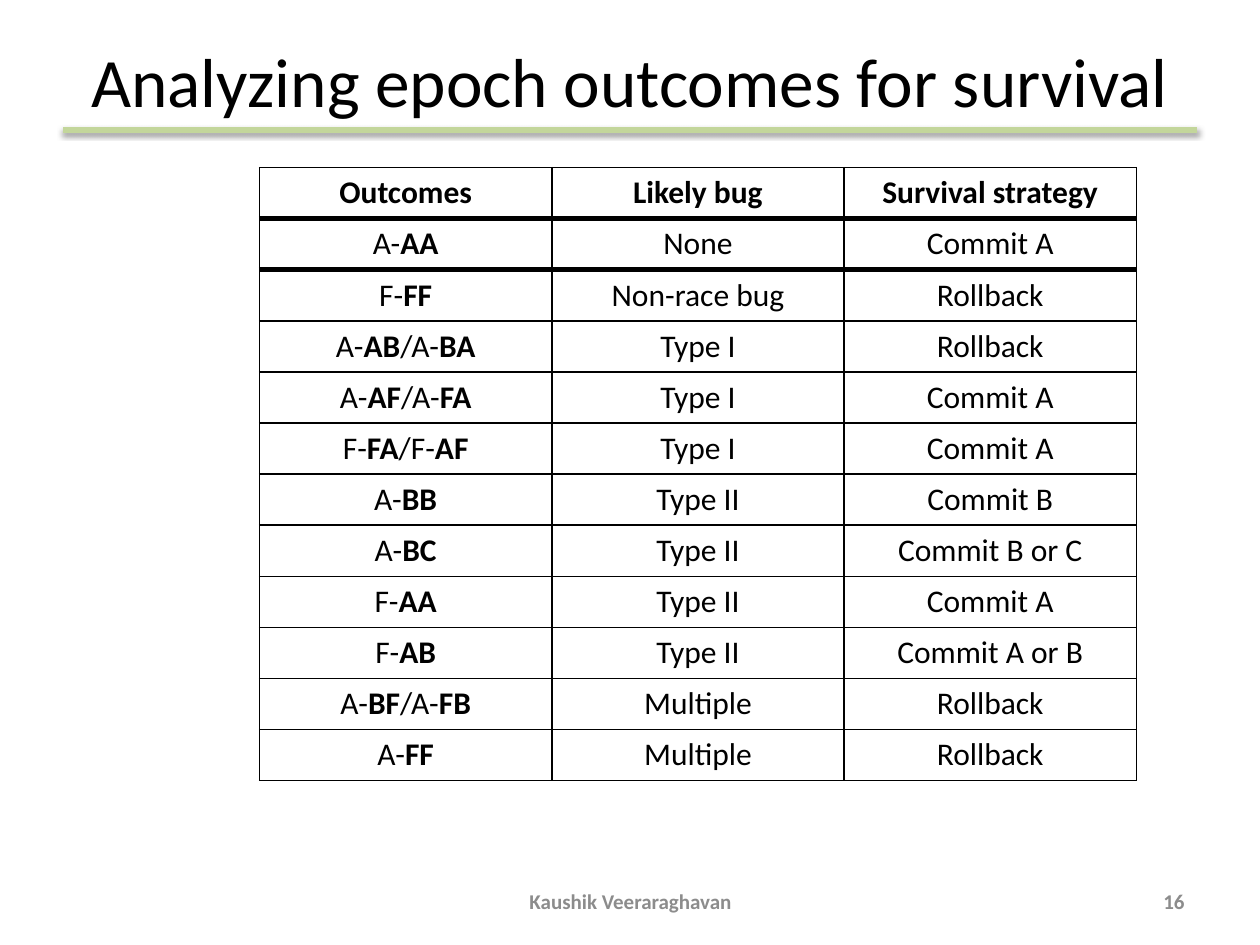
import dataclasses

import pptx
import pptx.dml.color
import pptx.enum.shapes
import pptx.enum.text
import pptx.oxml
import pptx.oxml.ns
import pptx.util
from pptx.util import Inches

ALIGN = pptx.enum.text.PP_ALIGN
NS = pptx.oxml.ns.nsdecls("a")


@dataclasses.dataclass(frozen=True)
class Theme:
    font: str = "Calibri"
    ink: str = "000000"
    muted: str = "8C8C8C"
    rule: str = "C3D69B"
    title: float = 39.6
    body: float = 18
    foot: float = 12
    thin: float = 1
    thick: float = 3


THEME = Theme()

HEAD = ("Outcomes", "Likely bug", "Survival strategy")
# Asterisks enclose bold parts.
ROWS = (
    ("A-*AA*", "None", "Commit A"),
    ("F-*FF*", "Non-race bug", "Rollback"),
    ("A-*AB*/A-*BA*", "Type I", "Rollback"),
    ("A-*AF*/A-*FA*", "Type I", "Commit A"),
    ("F-*FA*/F-*AF*", "Type I", "Commit A"),
    ("A-*BB*", "Type II", "Commit B"),
    ("A-*BC*", "Type II", "Commit B or C"),
    ("F-*AA*", "Type II", "Commit A"),
    ("F-*AB*", "Type II", "Commit A or B"),
    ("A-*BF*/A-*FB*", "Multiple", "Rollback"),
    ("A-*FF*", "Multiple", "Rollback"),
)


def write(frame, text, size, color=THEME.ink, bold=False, align=ALIGN.CENTER):
    """Fill a text frame; parts between asterisks are bold."""
    para = frame.paragraphs[0]
    para.alignment = align
    for i, part in enumerate(text.split("*")):
        if part:
            run = para.add_run()
            run.text = part
            run.font.name = THEME.font
            run.font.size = pptx.util.Pt(size)
            run.font.bold = bold or i % 2 == 1
            run.font.color.rgb = pptx.dml.color.RGBColor.from_string(color)


def label(slide, box, text, **form):
    frame = slide.shapes.add_textbox(*box).text_frame
    frame.word_wrap = True
    frame.vertical_anchor = pptx.enum.text.MSO_ANCHOR.MIDDLE
    write(frame, text, **form)


def border(cell, top, bottom):
    """Draw all four cell edges, with the given top and bottom widths."""
    props = cell._tc.get_or_add_tcPr()
    widths = {"L": THEME.thin, "R": THEME.thin, "T": top, "B": bottom}
    for i, (side, width) in enumerate(widths.items()):
        props.insert(i, pptx.oxml.parse_xml(
            f'<a:ln{side} {NS} w="{pptx.util.Pt(width)}"><a:solidFill>'
            f'<a:srgbClr val="{THEME.ink}"/></a:solidFill></a:ln{side}>'))


def header(slide, box):
    left, top, width, height = box
    line = slide.shapes.add_connector(
        pptx.enum.shapes.MSO_CONNECTOR.STRAIGHT,
        left, top + height, left + width, top + height)
    line.line.width = pptx.util.Pt(3.5)
    line.line.color.rgb = pptx.dml.color.RGBColor.from_string(THEME.rule)
    line._element.spPr.append(pptx.oxml.parse_xml(
        f'<a:effectLst {NS}><a:outerShdw blurRad="{pptx.util.Pt(3.1)}" '
        f'dist="{pptx.util.Pt(1.6)}" dir="5400000" rotWithShape="0">'
        f'<a:srgbClr val="{THEME.ink}"><a:alpha val="38000"/></a:srgbClr>'
        '</a:outerShdw></a:effectLst>'))
    label(slide, (left, top, width, Inches(0.66)),
          "Analyzing epoch outcomes for survival", size=THEME.title)


def grid(slide, box):
    data = (HEAD,) + ROWS
    table = slide.shapes.add_table(len(data), len(HEAD), *box).table
    table.first_row = table.horz_banding = False
    # Heavy rules close the header and the bug-free outcome.
    edges = [THEME.thin, THEME.thick, THEME.thick]
    edges += [THEME.thin] * (len(data) + 1 - len(edges))
    for r, row in enumerate(data):
        for c, text in enumerate(row):
            cell = table.cell(r, c)
            cell.fill.background()
            border(cell, edges[r], edges[r + 1])
            write(cell.text_frame, text, THEME.body, bold=r == 0)


def footer(slide, box):
    left, top, width, height = box
    form = dict(size=THEME.foot, color=THEME.muted, bold=True)
    label(slide, (left + Inches(2.92), top, Inches(3.17), height),
          "Kaushik Veeraraghavan", **form)
    page = Inches(2.33)
    label(slide, (left + width - page, top, page, height),
          "16", align=ALIGN.RIGHT, **form)


def main():
    deck = pptx.Presentation()
    deck.slide_width, deck.slide_height = Inches(10), Inches(7.5)
    slide = deck.slides.add_slide(deck.slide_layouts[6])
    header(slide, (Inches(0.5), Inches(0.3), Inches(9), Inches(0.73)))
    grid(slide, (Inches(2.06), Inches(1.33), Inches(6.96), Inches(4.87)))
    footer(slide, (Inches(0.5), Inches(6.95), Inches(9), Inches(0.4)))
    deck.save("out.pptx")


if __name__ == "__main__":
    main()
